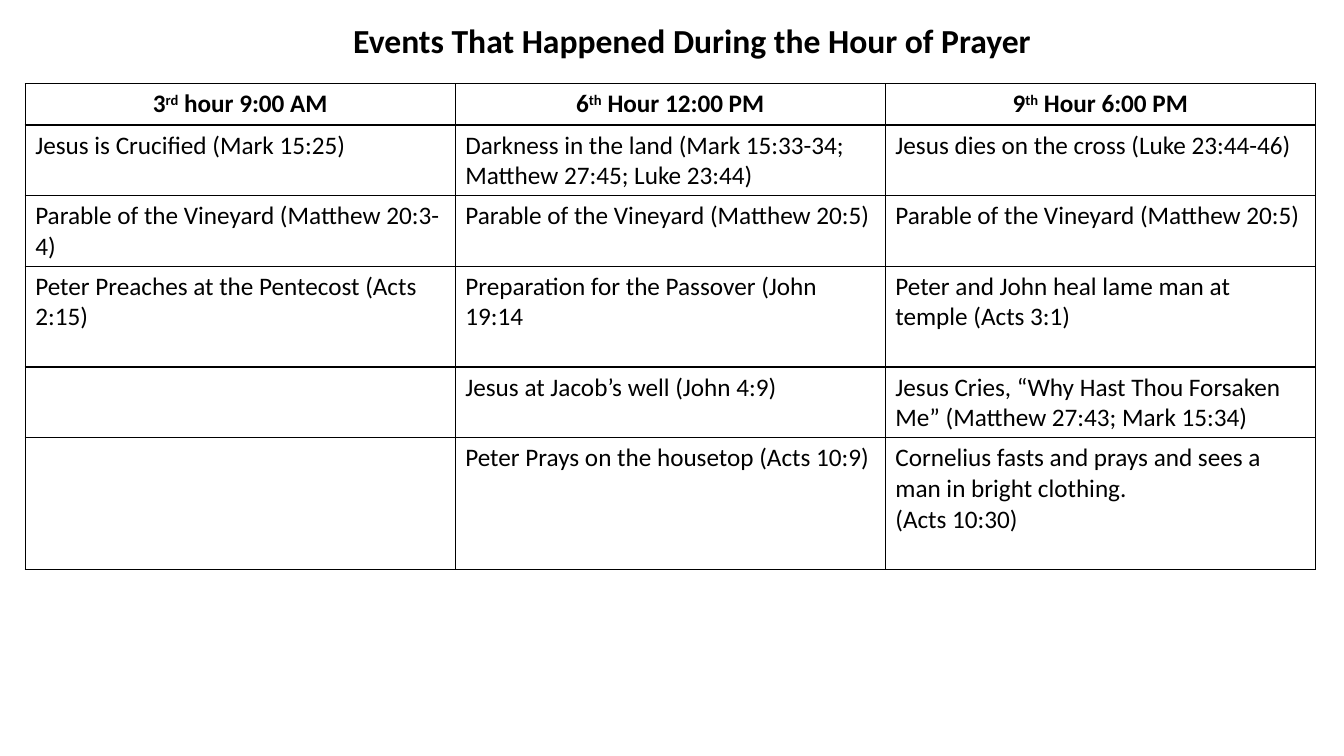
import dataclasses

import lxml.etree
import pptx
import pptx.dml.color
import pptx.enum.text
import pptx.oxml.ns
import pptx.util


@dataclasses.dataclass(frozen=True)
class Theme:
    font: str = "Calibri"
    ink: pptx.dml.color.RGBColor = pptx.dml.color.RGBColor(0, 0, 0)
    title: int = 24
    body: int = 18
    rule: int = 1


THEME = Theme()
WIDE, HIGH = pptx.util.Inches(13.33), pptx.util.Inches(7.5)
CENTER = pptx.enum.text.PP_ALIGN.CENTER
LEFT = pptx.enum.text.PP_ALIGN.LEFT

TITLE = "Events That Happened During the Hour of Prayer"
HOURS = [("3", "rd", " hour 9:00 AM"),
         ("6", "th", " Hour 12:00 PM"),
         ("9", "th", " Hour 6:00 PM")]
# Each event row: height in inches, then one text per hour.
EVENTS = [
    (0.7, "Jesus is Crucified (Mark 15:25)",
     "Darkness in the land (Mark 15:33-34; Matthew 27:45; Luke 23:44)",
     "Jesus dies on the cross (Luke 23:44-46)"),
    (0.7, "Parable of the Vineyard (Matthew 20:3-4)",
     "Parable of the Vineyard (Matthew 20:5)",
     "Parable of the Vineyard (Matthew 20:5)"),
    (1.0, "Peter Preaches at the Pentecost (Acts 2:15)",
     "Preparation for the Passover (John 19:14",
     "Peter and John heal lame man at temple (Acts 3:1)"),
    (0.7, "", "Jesus at Jacob’s well (John 4:9)",
     "Jesus Cries, “Why Hast Thou Forsaken Me” "
     "(Matthew 27:43; Mark 15:34)"),
    (1.31, "", "Peter Prays on the housetop (Acts 10:9)",
     "Cornelius fasts and prays and sees a man in bright clothing.\n"
     "(Acts 10:30)"),
]
HEAD = 0.41


def add_run(para, text, size, bold=False, raised=False):
    run = para.add_run()
    run.text = text
    run.font.name = THEME.font
    run.font.size = pptx.util.Pt(size)
    run.font.bold = bold
    run.font.color.rgb = THEME.ink
    if raised:
        run.font._element.set("baseline", "30000")


def rule_cell(cell):
    """Draw a line on all four sides and leave the cell unfilled."""
    qn = pptx.oxml.ns.qn
    props = cell._tc.get_or_add_tcPr()
    for side in ("lnL", "lnR", "lnT", "lnB"):
        line = lxml.etree.SubElement(props, qn("a:" + side),
                                     w=str(pptx.util.Pt(THEME.rule)))
        fill = lxml.etree.SubElement(line, qn("a:solidFill"))
        lxml.etree.SubElement(fill, qn("a:srgbClr"), val=str(THEME.ink))
    cell.fill.background()


def place_title(slide, left, top, width, height):
    title = slide.shapes.title
    title.left, title.top = left, top
    title.width, title.height = width, height
    frame = title.text_frame
    frame.word_wrap = True
    frame.auto_size = pptx.enum.text.MSO_AUTO_SIZE.SHAPE_TO_FIT_TEXT
    frame.vertical_anchor = pptx.enum.text.MSO_ANCHOR.TOP
    frame.paragraphs[0].alignment = CENTER
    add_run(frame.paragraphs[0], TITLE, THEME.title, bold=True)


def fill_head(cell, parts):
    para = cell.text_frame.paragraphs[0]
    para.alignment = CENTER
    for index, part in enumerate(parts):
        add_run(para, part, THEME.body, bold=True, raised=index == 1)


def fill_event(cell, text):
    frame = cell.text_frame
    for index, line in enumerate(text.split("\n")):
        para = frame.add_paragraph() if index else frame.paragraphs[0]
        para.alignment = LEFT
        if line:
            add_run(para, line, THEME.body)


def place_table(slide, left, top, width):
    highs = [pptx.util.Inches(high)
             for high in [HEAD] + [event[0] for event in EVENTS]]
    table = slide.shapes.add_table(len(highs), len(HOURS), left, top,
                                   width, sum(highs)).table
    table.horz_banding = False
    for row, high in zip(table.rows, highs):
        row.height = high
    for col, parts in enumerate(HOURS):
        fill_head(table.cell(0, col), parts)
    for row, event in enumerate(EVENTS, 1):
        for col, text in enumerate(event[1:]):
            fill_event(table.cell(row, col), text)
    for cell in table.iter_cells():
        rule_cell(cell)


def main():
    deck = pptx.Presentation()
    deck.slide_width, deck.slide_height = WIDE, HIGH
    slide = deck.slides.add_slide(deck.slide_layouts.get_by_name("Title Only"))
    place_title(slide, int(WIDE * 0.215), int(HIGH * 0.02),
                int(WIDE * 0.6), pptx.util.Inches(0.5))
    place_table(slide, pptx.util.Inches(0.25), pptx.util.Inches(0.83),
                int(WIDE * 0.96))
    deck.save("out.pptx")


if __name__ == "__main__":
    main()
